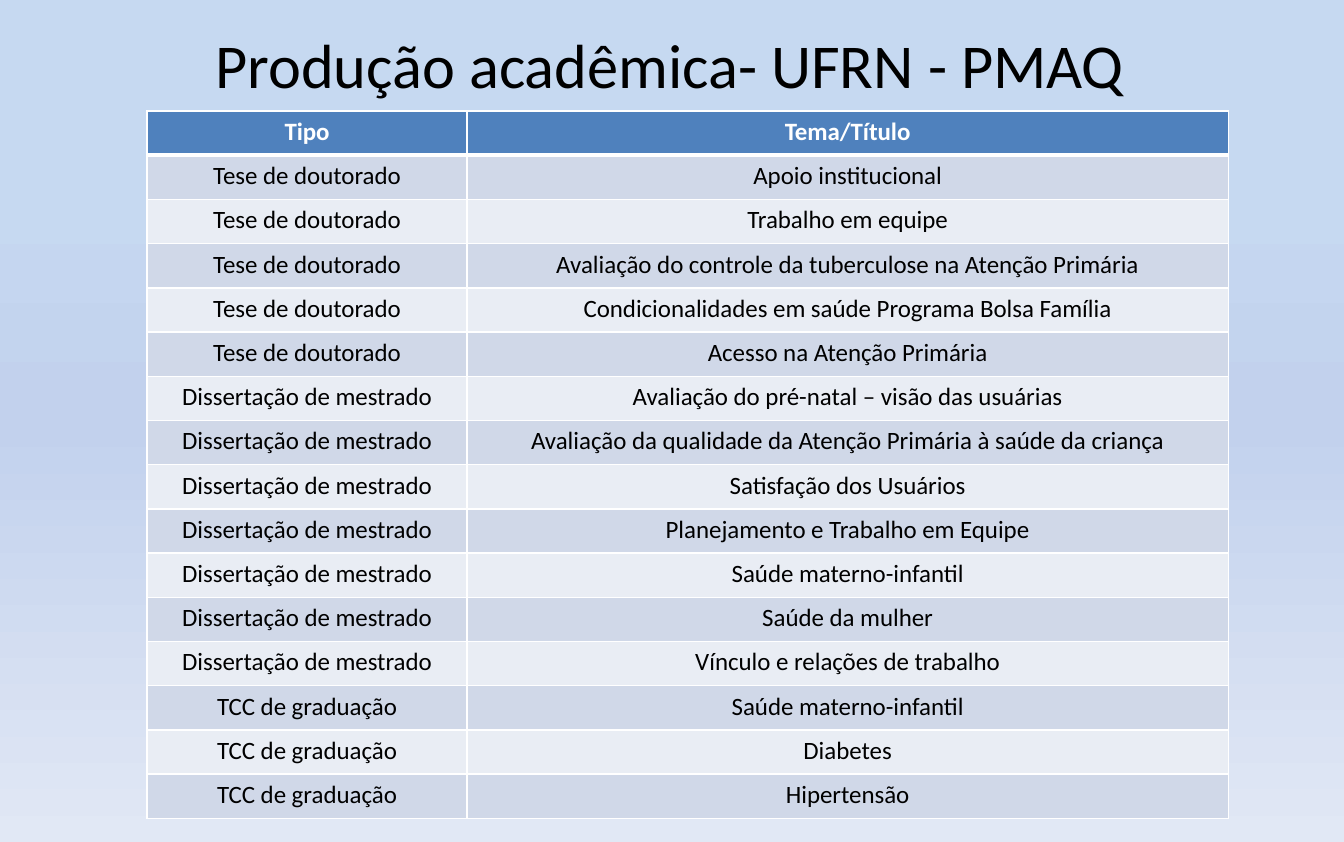
from copy import deepcopy

from lxml import etree
from pptx import Presentation
from pptx import util as u
from pptx.dml.color import RGBColor
from pptx.enum import text
from pptx.oxml import ns

WIDTH, HEIGHT = u.Inches(11.97), u.Inches(7.5)
FONT = "Calibri"
BLACK = RGBColor(0x00, 0x00, 0x00)
WHITE = RGBColor(0xFF, 0xFF, 0xFF)
HEADER_BLUE = RGBColor(0x4F, 0x81, 0xBD)
BANDS = (RGBColor(0xE9, 0xED, 0xF4), RGBColor(0xD0, 0xD8, 0xE8))
SKY = (
    (0.22, RGBColor(0xC6, 0xD9, 0xF1)),
    (0.50, RGBColor(0xC2, 0xD1, 0xED)),
    (1.00, RGBColor(0xE1, 0xE8, 0xF5)),
)

TITLE = "Produção acadêmica- UFRN - PMAQ"
HEADER = ("Tipo", "Tema/Título")
WORKS = {
    "Tese de doutorado": (
        "Apoio institucional",
        "Trabalho em equipe",
        "Avaliação do controle da tuberculose na Atenção Primária",
        "Condicionalidades em saúde Programa Bolsa Família",
        "Acesso na Atenção Primária",
    ),
    "Dissertação de mestrado": (
        "Avaliação do pré-natal – visão das usuárias",
        "Avaliação da qualidade da Atenção Primária à saúde da criança",
        "Satisfação dos Usuários",
        "Planejamento e Trabalho em Equipe",
        "Saúde materno-infantil",
        "Saúde da mulher",
        "Vínculo e relações de trabalho",
    ),
    "TCC de graduação": ("Saúde materno-infantil", "Diabetes", "Hipertensão"),
}

TITLE_BOX = dict(left=u.Inches(1.3), top=u.Inches(0.13),
                 width=u.Inches(9.33), height=u.Inches(0.87))
TABLE_LEFT, TABLE_TOP = u.Inches(1.31), u.Inches(0.99)
COLUMN_WIDTHS = (u.Inches(2.85), u.Inches(6.78))
TABLE_HEIGHT = u.Inches(6.3)


def apply(target, values):
    for name, value in values.items():
        setattr(target, name, value)


def write(tf, content, size, color, bold=False):
    p = tf.paragraphs[0]
    p.alignment = text.PP_ALIGN.CENTER
    r = p.add_run()
    r.text = content
    apply(r.font, dict(name=FONT, size=u.Pt(size), bold=bold))
    r.font.color.rgb = color


def paint_background(s):
    fill = s.background.fill
    fill.gradient()
    fill.gradient_angle = 270
    stops = s.element.find(".//" + ns.qn("a:gsLst"))
    stops.append(deepcopy(stops[-1]))
    for stop, (position, color) in zip(fill.gradient_stops, SKY):
        stop.position = position
        stop.color.rgb = color


def add_title(s):
    sp = s.shapes.title
    apply(sp, TITLE_BOX)
    tf = sp.text_frame
    apply(tf, dict(word_wrap=True, vertical_anchor=text.MSO_ANCHOR.MIDDLE))
    write(tf, TITLE, 40, BLACK)


def add_borders(cell, widths):
    tc_pr = cell._tc.get_or_add_tcPr()
    for side, width in widths.items():
        ln = etree.SubElement(tc_pr, ns.qn(f"a:ln{side}"), w=str(u.Pt(width)))
        solid = etree.SubElement(ln, ns.qn("a:solidFill"))
        etree.SubElement(solid, ns.qn("a:srgbClr"), val=str(WHITE))


def fill_cell(cell, content, row):
    is_header = row == 0
    add_borders(cell, dict(L=1, R=1, T=3 if row == 1 else 1, B=3 if is_header else 1))
    cell.fill.solid()
    cell.fill.fore_color.rgb = HEADER_BLUE if is_header else BANDS[row % 2]
    write(cell.text_frame, content, 16, WHITE if is_header else BLACK, is_header)


def add_works_table(s):
    rows = [HEADER] + [(kind, theme) for kind, themes in WORKS.items() for theme in themes]
    table = s.shapes.add_table(len(rows), len(HEADER), TABLE_LEFT, TABLE_TOP,
                               sum(COLUMN_WIDTHS), TABLE_HEIGHT).table
    for column, width in zip(table.columns, COLUMN_WIDTHS):
        column.width = width
    for i, row in enumerate(rows):
        for j, content in enumerate(row):
            fill_cell(table.cell(i, j), content, i)


def main():
    prs = Presentation()
    apply(prs, dict(slide_width=WIDTH, slide_height=HEIGHT))
    s = prs.slides.add_slide(prs.slide_layouts.get_by_name("Title Only"))
    paint_background(s)
    add_title(s)
    add_works_table(s)
    prs.save("out.pptx")


if __name__ == "__main__":
    main()
